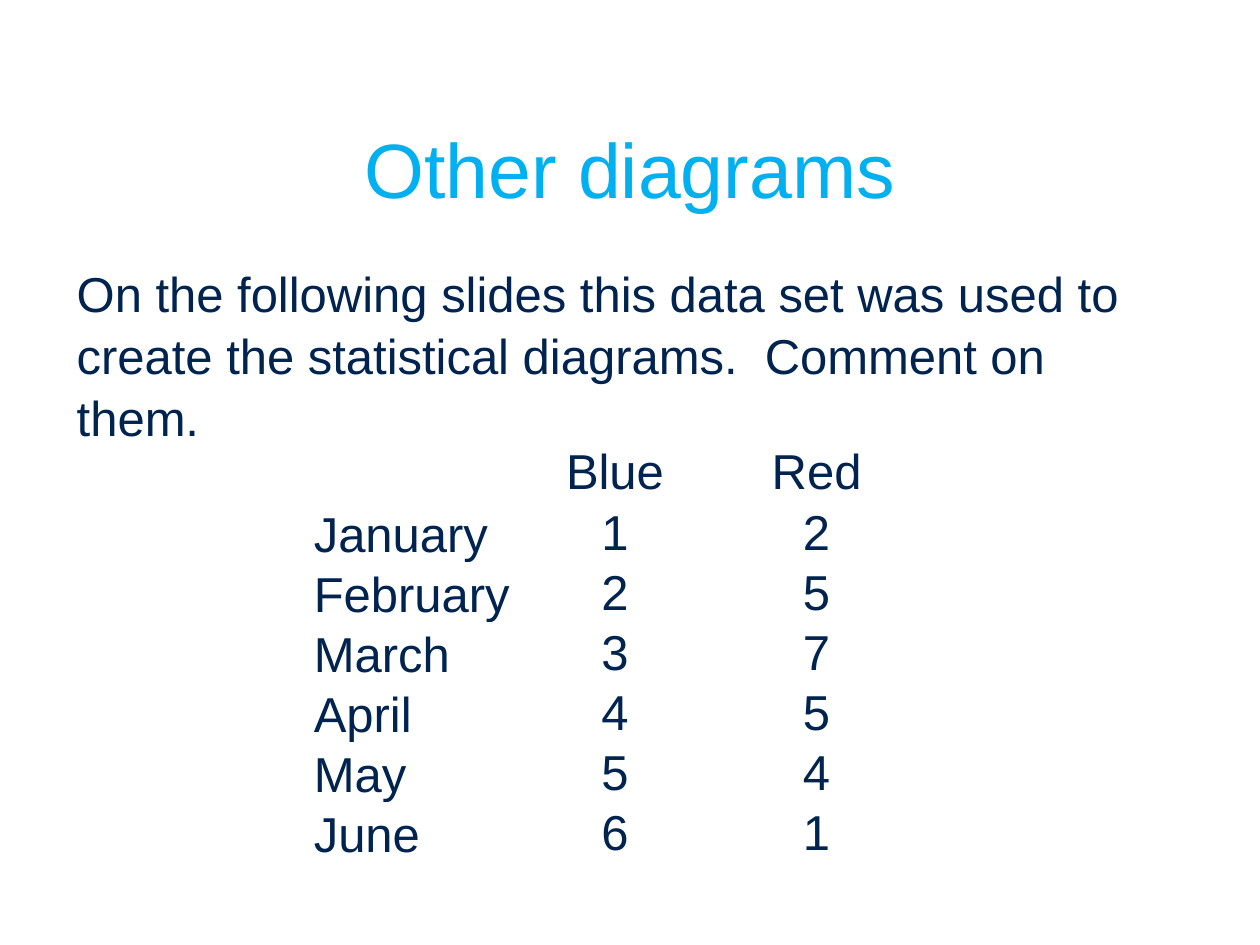
from pptx import Presentation
from pptx.dml.color import RGBColor
from pptx.enum.text import MSO_ANCHOR, PP_ALIGN
from pptx.util import Pt

LEFT, CENTER = PP_ALIGN.LEFT, PP_ALIGN.CENTER
MIDDLE, BOTTOM = MSO_ANCHOR.MIDDLE, MSO_ANCHOR.BOTTOM
COLORS = {"heading": "00B0F0", "body": "002350"}
MONTHLY_COUNTS = [
    ("", "Blue", "Red"),
    ("January", "1", "2"),
    ("February", "2", "5"),
    ("March", "3", "7"),
    ("April", "4", "5"),
    ("May", "5", "4"),
    ("June", "6", "1"),
]


def write(frame, text, size=28, color="body", align=LEFT, spacing=1.0):
    frame.word_wrap = True
    paragraph = frame.paragraphs[0]
    paragraph.alignment = align
    paragraph.line_spacing = spacing
    run = paragraph.add_run()
    run.text = text
    run.font.name = "Arial"
    run.font.size = Pt(size)
    run.font.color.rgb = RGBColor.from_string(COLORS[color])


class DataSetSlide:
    """Holds the slide and its text and table style."""

    cell_margin = 0.72
    row_height = 32

    def __init__(self, deck):
        self.slide = deck.slides.add_slide(deck.slide_layouts[5])

    def title(self, text, left, top, width, height):
        heading = self.slide.shapes.title
        heading.left, heading.top = Pt(left), Pt(top)
        heading.width, heading.height = Pt(width), Pt(height)
        heading.text_frame.vertical_anchor = BOTTOM
        write(heading.text_frame, text, size=44, color="heading", align=CENTER)

    def text(self, text, left, top, width, height):
        intro = self.slide.shapes.add_textbox(Pt(left), Pt(top), Pt(width), Pt(height))
        write(intro.text_frame, text, spacing=1.05)

    def table(self, rows, left, top, column_width):
        columns = len(rows[0])
        counts = self.slide.shapes.add_table(
            len(rows), columns, Pt(left), Pt(top),
            Pt(column_width * columns), Pt(self.row_height * len(rows)),
        ).table
        counts.first_row = counts.horz_banding = False
        for row, values in enumerate(rows):
            for column, value in enumerate(values):
                self.cell(counts.cell(row, column), value, is_month=column == 0)

    def cell(self, cell, value, is_month):
        cell.fill.background()
        cell.margin_left = cell.margin_right = cell.margin_top = Pt(self.cell_margin)
        cell.margin_bottom = Pt(0)
        cell.vertical_anchor = BOTTOM if is_month else MIDDLE
        if value:
            write(cell.text_frame, value, align=LEFT if is_month else CENTER)


def main():
    deck = Presentation()
    deck.slide_width, deck.slide_height = Pt(720), Pt(540)
    page = DataSetSlide(deck)
    page.title("Other diagrams", 54, 66, 612, 60)
    page.text(
        "On the following slides this data set was used to create "
        "the statistical diagrams.  Comment on them.",
        36.8, 145.5, 640.8, 357,
    )
    page.table(MONTHLY_COUNTS, 178.6, 252.7, 115.2)
    deck.save("out.pptx")


if __name__ == "__main__":
    main()
